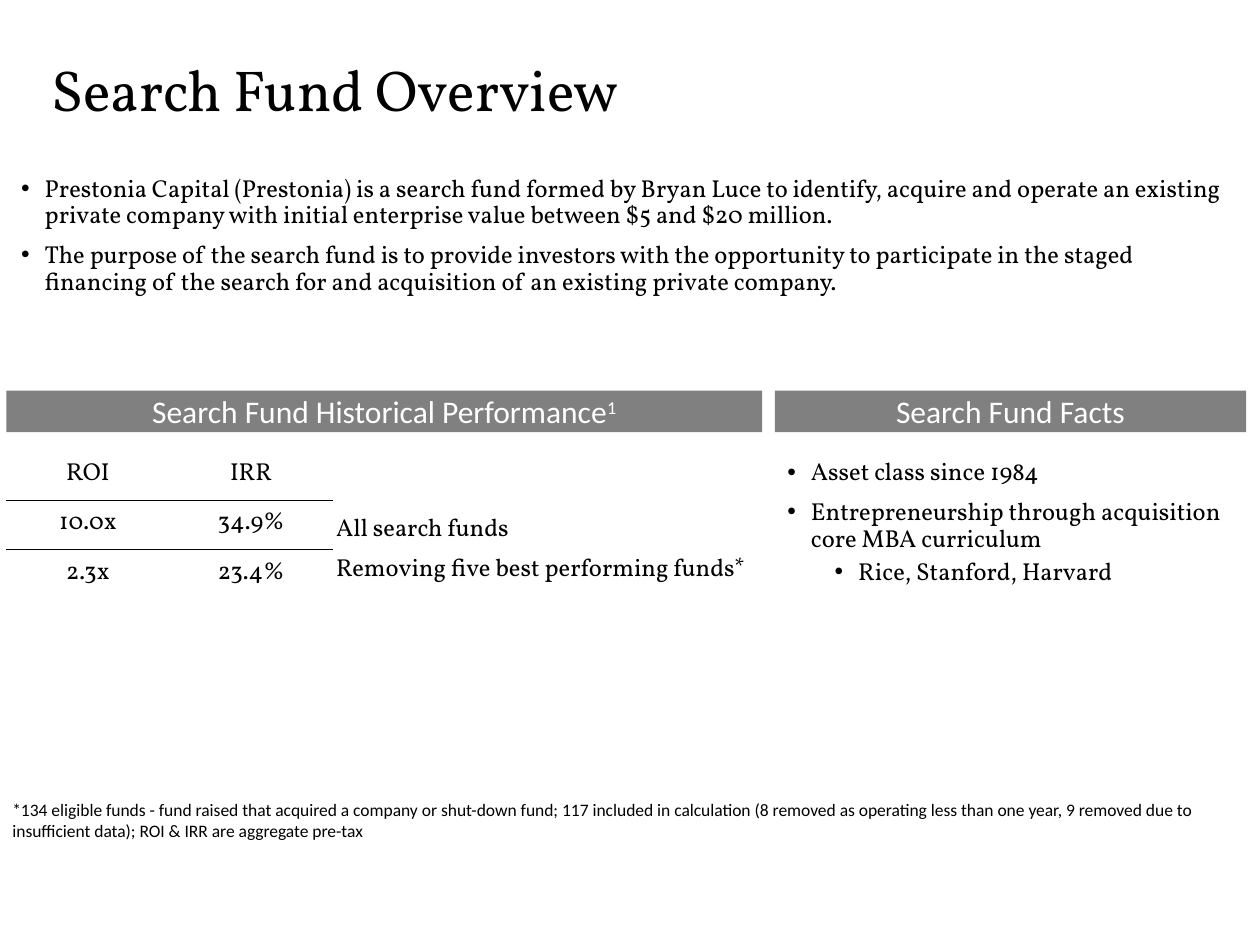
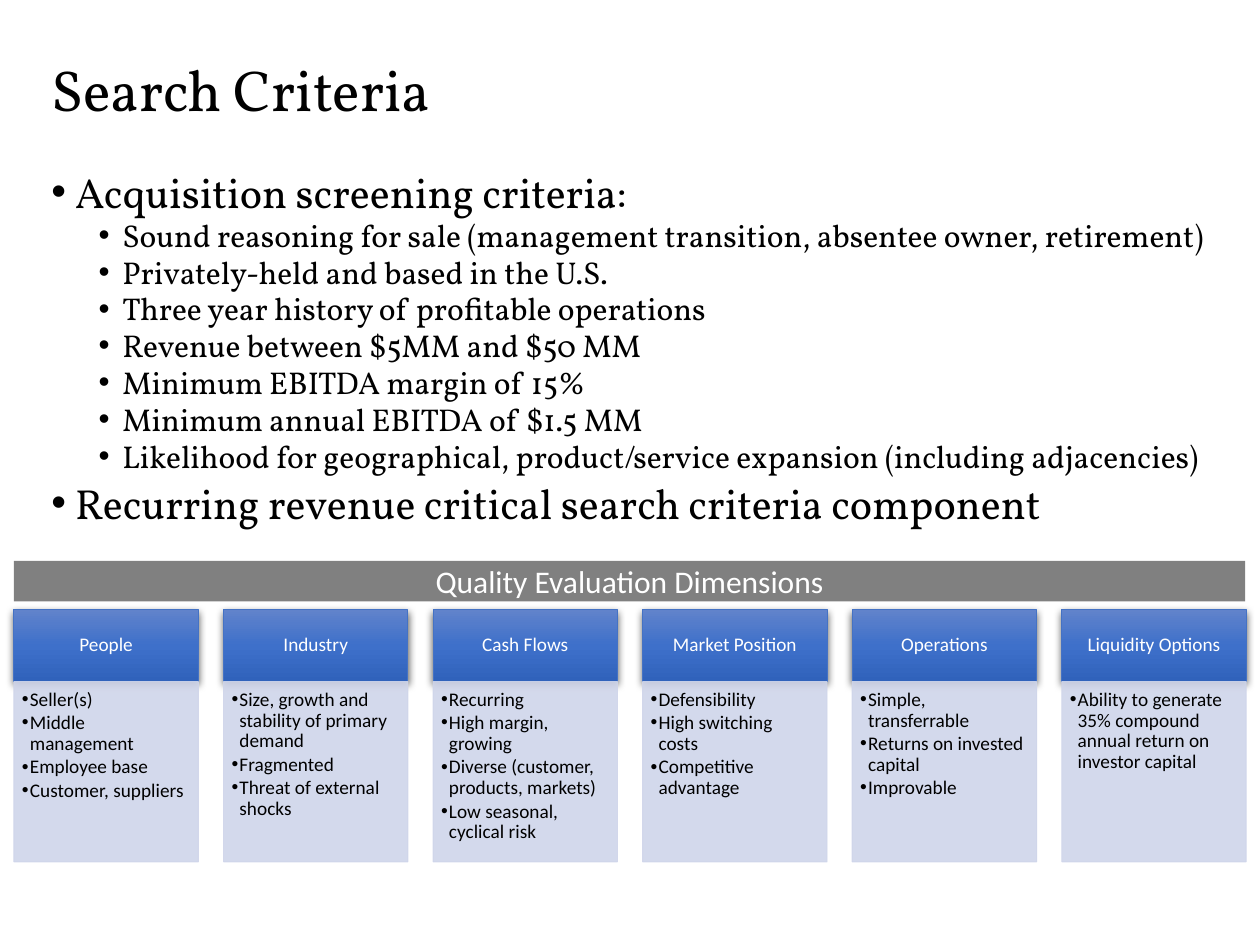
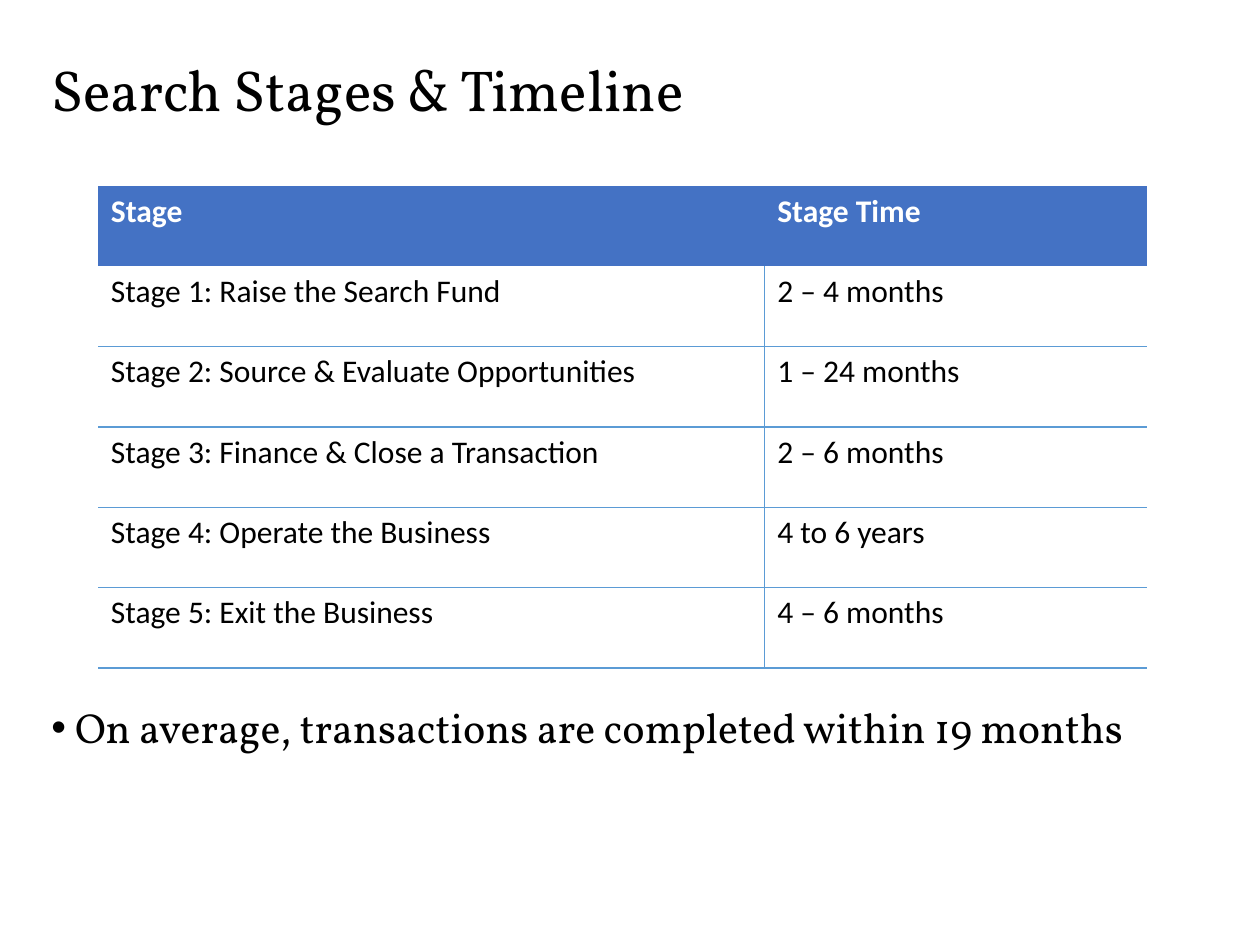
import copy
import pptx
import pptx.util
import pptx.dml.color
import pptx.enum.shapes
import pptx.enum.text
import pptx.oxml.ns
from lxml import etree

Pt = pptx.util.Pt
qn = pptx.oxml.ns.qn
ALIGN = pptx.enum.text.PP_ALIGN
MID = pptx.enum.text.MSO_ANCHOR.MIDDLE
RECT = pptx.enum.shapes.MSO_SHAPE.RECTANGLE

# Shared look
SERIF, SANS = "Vollkorn", "Calibri"
BLACK, WHITE, GRAY = "000000", "FFFFFF", "808080"
BLUE, PALE, RULE = "4472C4", "CFD5EA", "5B9BD5"


def hue(code):
    return pptx.dml.color.RGBColor.from_string(code)


def write(frame, rows, size, face=SERIF, tone=BLACK, align=ALIGN.LEFT,
          lead=0.9, gap=7.5, after=0, step=13.5, small=None, bold=False):
    """Fill a frame with (level, text) rows: 0 plain, 1 bullet, 2 sub-bullet."""
    frame.word_wrap = True
    for i, (level, text) in enumerate(rows):
        para = frame.paragraphs[0] if i == 0 else frame.add_paragraph()
        para.add_run().text = text
        para.alignment = align
        para.line_spacing = lead
        para.space_before = Pt(0 if i == 0 else gap / 2 if level == 2 else gap)
        para.space_after = Pt(after)
        if level:
            props = para._p.get_or_add_pPr()
            props.set("marL", str(Pt(step if level == 1 else 3 * step)))
            props.set("indent", str(-Pt(step)))
            etree.SubElement(props, qn("a:buFont"), typeface="Arial")
            etree.SubElement(props, qn("a:buChar"), char="•")
        para.font.name = face
        para.font.size = Pt(small if small and level == 2 else size)
        para.font.bold = bold
        para.font.color.rgb = hue(tone)


deck = pptx.Presentation()
deck.slide_width, deck.slide_height = Pt(720), Pt(540)

# Slides and titles
pages = []
for title in ("Search Fund Overview", "Search Criteria", "Search Stages & Timeline"):
    page = deck.slides.add_slide(deck.slide_layouts[6])
    box = page.shapes.add_textbox(Pt(22.3), Pt(26.6), Pt(668.2), Pt(52.6))
    box.text_frame.vertical_anchor = MID
    write(box.text_frame, [(0, title)], 33)
    pages.append(page)
fund, tests, stages = pages

# Body texts
intro = [
    (1, "Prestonia Capital (Prestonia) is a search fund formed by Bryan Luce to identify, "
        "acquire and operate an existing private company with initial enterprise value "
        "between $5 and $20 million."),
    (1, "The purpose of the search fund is to provide investors with the opportunity to "
        "participate in the staged financing of the search for and acquisition of an "
        "existing private company."),
]
facts = [
    (1, "Asset class since 1984"),
    (1, "Entrepreneurship through acquisition core MBA curriculum"),
    (2, "Rice, Stanford, Harvard"),
]
labels = [(0, "All search funds"), (0, "Removing five best performing funds*")]
note = [
    (0, "*134 eligible funds - fund raised that acquired a company or shut-down fund; 117 "
        "included in calculation (8 removed as operating less than one year, 9 removed due "
        "to insufficient data); ROI & IRR are aggregate pre-tax"),
]
screen = [
    (1, "Acquisition screening criteria:"),
    (2, "Sound reasoning for sale (management transition, absentee owner, retirement)"),
    (2, "Privately-held and based in the U.S."),
    (2, "Three year history of profitable operations"),
    (2, "Revenue between $5MM and $50 MM"),
    (2, "Minimum EBITDA margin of 15%"),
    (2, "Minimum annual EBITDA of $1.5 MM"),
    (2, "Likelihood for geographical, product/service expansion (including adjacencies)"),
    (1, "Recurring revenue critical search criteria component"),
]
span = [(1, "On average, transactions are completed within 19 months")]

for page, area, rows, style in (
    (fund, (5, 97.2, 707, 94.3), intro, dict(size=14)),
    (fund, (442.8, 259.2, 277.2, 165.6), facts, dict(size=14)),
    (fund, (185, 290.9, 257, 63.4), labels, dict(size=14)),
    (fund, (0, 452.9, 720, 31.7), note, dict(size=10, face=SANS, lead=1)),
    (tests, (22.3, 97.2, 689.8, 213.8), screen, dict(size=24, small=18, lead=0.8)),
    (stages, (22.3, 400.3, 689.8, 92.2), span, dict(size=24)),
):
    box = page.shapes.add_textbox(*map(Pt, area))
    write(box.text_frame, rows, **style)

# Gray section bars
for page, area, text, mark in (
    (fund, (442.8, 223.2, 269.3, 23.8), "Search Fund Facts", ""),
    (fund, (3.6, 223.2, 432, 23.8), "Search Fund Historical Performance", "1"),
    (tests, (8, 320.5, 703.6, 23.2), "Quality Evaluation Dimensions", ""),
):
    bar = page.shapes.add_shape(RECT, *map(Pt, area))
    bar.shadow.inherit = False
    bar.fill.solid()
    bar.fill.fore_color.rgb = hue(GRAY)
    bar.line.fill.background()
    bar.text_frame.vertical_anchor = MID
    write(bar.text_frame, [(0, text)], 18, SANS, WHITE, ALIGN.CENTER, lead=1)
    if mark:
        run = bar.text_frame.paragraphs[0].add_run()
        run.text = mark
        run._r.get_or_add_rPr().set("baseline", "30000")

# Quality dimension columns
themes = {
    "People": ["Seller(s)", "Middle management", "Employee base", "Customer, suppliers"],
    "Industry": ["Size, growth and stability of primary demand", "Fragmented",
                 "Threat of external shocks"],
    "Cash Flows": ["Recurring", "High margin, growing",
                   "Diverse (customer, products, markets)", "Low seasonal, cyclical risk"],
    "Market Position": ["Defensibility", "High switching costs", "Competitive advantage"],
    "Operations": ["Simple, transferrable", "Returns on invested capital", "Improvable"],
    "Liquidity Options": ["Ability to generate 35% compound annual return on investor capital"],
}
for i, (theme, points) in enumerate(themes.items()):
    left = 8 + 119.75 * i
    head = tests.shapes.add_shape(RECT, Pt(left), Pt(348.5), Pt(105.4), Pt(41))
    body = tests.shapes.add_shape(RECT, Pt(left), Pt(389.5), Pt(105.4), Pt(103))
    for part, edge in ((head, BLUE), (body, PALE)):
        part.shadow.inherit = False
        part.line.color.rgb = hue(edge)
        part.line.width = Pt(0.5)

    # Header: three-stop gradient and soft shadow
    head.fill.gradient()
    head.fill.gradient_angle = 270
    props = head._element.spPr
    stops = props.find(".//" + qn("a:gsLst"))
    stops.append(copy.deepcopy(stops[-1]))
    for stop, (place, tone) in zip(
            head.fill.gradient_stops, ((0, "6183CB"), (0.5, "3E70CA"), (1, "3062BB"))):
        stop.position = place
        stop.color.rgb = hue(tone)
    cast = etree.SubElement(props.find(qn("a:effectLst")), qn("a:outerShdw"),
                            blurRad=str(Pt(4.5)), dist=str(Pt(1.5)), dir="5400000",
                            algn="ctr", rotWithShape="0")
    shade = etree.SubElement(cast, qn("a:srgbClr"), val=BLACK)
    etree.SubElement(shade, qn("a:alpha"), val="63000")
    head.text_frame.vertical_anchor = MID
    write(head.text_frame, [(0, theme)], 11, SANS, WHITE, ALIGN.CENTER)

    # List: pale and slightly transparent
    body.fill.solid()
    body.fill.fore_color.rgb = hue(PALE)
    for tone in body._element.spPr.iter(qn("a:srgbClr")):
        etree.SubElement(tone, qn("a:alpha"), val="90000")
    frame = body.text_frame
    frame.vertical_anchor = pptx.enum.text.MSO_ANCHOR.TOP
    frame.margin_left = frame.margin_top = Pt(4.6)
    frame.margin_right, frame.margin_bottom = Pt(6.2), Pt(7)
    write(frame, [(1, point) for point in points], 11, SANS, gap=0, after=1.5, step=4.5)

# Tables
returns = [("ROI", "IRR"), ("10.0x", "34.9%"), ("2.3x", "23.4%")]
times = [
    ("Stage", "Stage Time"),
    ("Stage 1: Raise the Search Fund", "2 – 4 months"),
    ("Stage 2: Source & Evaluate Opportunities", "1 – 24 months"),
    ("Stage 3: Finance & Close a Transaction", "2 – 6 months"),
    ("Stage 4: Operate the Business", "4 to 6 years"),
    ("Stage 5: Exit the Business", "4 – 6 months"),
]
for page, rows, left, top, widths, high, ink, cuts, band, style in (
    (fund, returns, 3.6, 257.8, (93.3, 93.3), 28.1, BLACK, (0, 1), None,
     dict(size=14, align=ALIGN.CENTER)),
    (stages, times, 56.2, 106.3, (380.8, 218.2), 45.9, RULE, range(1, 6), BLUE,
     dict(size=18, face=SANS)),
):
    grid = page.shapes.add_table(len(rows), 2, Pt(left), Pt(top),
                                 Pt(sum(widths)), Pt(high * len(rows))).table
    grid.first_row = grid.horz_banding = False
    for c, width in enumerate(widths):
        grid.columns[c].width = Pt(width)
    for r, row in enumerate(rows):
        grid.rows[r].height = Pt(high)
        for c, text in enumerate(row):
            cell = grid.cell(r, c)
            top_band = band and r == 0
            split = band and r > 0
            edges = {"L": split and c == 1, "R": split and c == 0,
                     "T": r - 1 in cuts, "B": r in cuts}
            for side, drawn in edges.items():
                line = etree.SubElement(cell._tc.get_or_add_tcPr(), qn("a:ln" + side),
                                        w=str(Pt(1)))
                if drawn:
                    paint = etree.SubElement(line, qn("a:solidFill"))
                    etree.SubElement(paint, qn("a:srgbClr"), val=ink)
                else:
                    etree.SubElement(line, qn("a:noFill"))
            if top_band:
                cell.fill.solid()
                cell.fill.fore_color.rgb = hue(band)
            else:
                cell.fill.background()
            write(cell.text_frame, [(0, text)], lead=1, bold=bool(top_band),
                  tone=WHITE if top_band else BLACK, **style)

deck.save("out.pptx")
